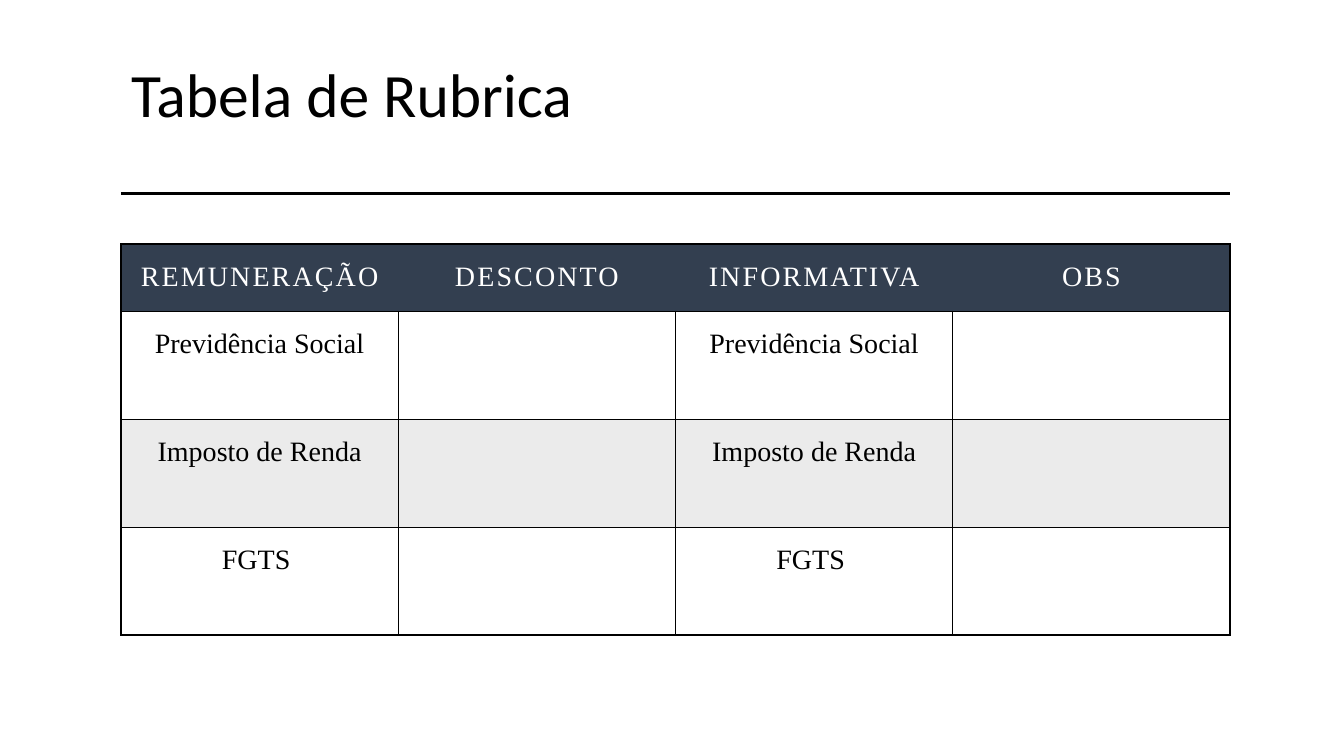
from dataclasses import dataclass

from lxml.etree import SubElement
from pptx import Presentation
from pptx.dml.color import RGBColor
from pptx.enum.shapes import MSO_CONNECTOR
from pptx.enum.text import MSO_ANCHOR, PP_ALIGN
from pptx.oxml.ns import qn
from pptx.util import Inches, Pt


@dataclass(frozen=True)
class Theme:
    black: str = "000000"
    white: str = "FFFFFF"
    header: str = "333F50"
    band: str = "EBEBEB"
    title_font: str = "Calibri"
    table_font: str = "Times New Roman"
    title_size: int = 44
    table_size: int = 20
    border_width: int = 1
    rule_width: float = 1.5
    header_spacing: float = 1.5


THEME = Theme()
LEFT, WIDTH = 1.2, 11
HEADER_HEIGHT, ROW_HEIGHT, CELL_MARGIN = 0.67, 1.07, 0.17

HEADINGS = ["REMUNERAÇÃO", "DESCONTO", "INFORMATIVA", "OBS"]
RUBRICS = ["Previdência Social", "Imposto de Renda", "FGTS "]
ROWS = [HEADINGS] + [[rubric, "", rubric, ""] for rubric in RUBRICS]


def add_run(paragraph, text, font_name, size, color):
    run = paragraph.add_run()
    run.text = text
    run.font.name = font_name
    run.font.size = Pt(size)
    run.font.bold = False
    run.font.color.rgb = RGBColor.from_string(color)
    return run


def place_title(slide, text, left, top, width, height):
    title = slide.shapes.title
    title.left, title.top = Inches(left), Inches(top)
    title.width, title.height = Inches(width), Inches(height)
    title.text_frame.vertical_anchor = MSO_ANCHOR.MIDDLE
    paragraph = title.text_frame.paragraphs[0]
    paragraph.alignment = PP_ALIGN.LEFT
    paragraph.line_spacing = 0.9
    add_run(paragraph, text, THEME.title_font, THEME.title_size, THEME.black)


def add_rule(slide, left, top, width):
    rule = slide.shapes.add_connector(
        MSO_CONNECTOR.STRAIGHT,
        Inches(left), Inches(top), Inches(left + width), Inches(top))
    rule.line.color.rgb = RGBColor.from_string(THEME.black)
    rule.line.width = Pt(THEME.rule_width)
    SubElement(rule.element.spPr, qn("a:effectLst"))


def set_borders(cell, visible_sides):
    """Draw the given sides (letters of LRTB) and clear the others."""
    properties = cell._tc.get_or_add_tcPr()
    for position, side in enumerate("LRTB"):
        border = SubElement(properties, qn(f"a:ln{side}"),
                            w=str(Pt(THEME.border_width)))
        if side in visible_sides:
            fill = SubElement(border, qn("a:solidFill"))
            SubElement(fill, qn("a:srgbClr"), val=THEME.black)
        else:
            SubElement(border, qn("a:noFill"))
        properties.insert(position, border)


def fill_cell(cell, text, row):
    is_header = row == 0
    cell.margin_left = cell.margin_right = Inches(CELL_MARGIN)
    cell.margin_top = cell.margin_bottom = Inches(CELL_MARGIN)
    if is_header or row % 2 == 0:
        cell.fill.solid()
        color = THEME.header if is_header else THEME.band
        cell.fill.fore_color.rgb = RGBColor.from_string(color)
    else:
        cell.fill.background()
    if text:
        paragraph = cell.text_frame.paragraphs[0]
        paragraph.alignment = PP_ALIGN.CENTER
        run = add_run(paragraph, text, THEME.table_font, THEME.table_size,
                      THEME.white if is_header else THEME.black)
        if is_header:
            run.font._element.set("spc", str(round(THEME.header_spacing * 100)))


def add_rubric_table(slide, left, top, width):
    height = HEADER_HEIGHT + ROW_HEIGHT * len(RUBRICS)
    table = slide.shapes.add_table(
        len(ROWS), len(HEADINGS),
        Inches(left), Inches(top), Inches(width), Inches(height)).table
    table.horz_banding = False
    for column in table.columns:
        column.width = Inches(width / len(HEADINGS))
    last = len(HEADINGS) - 1
    for row, texts in enumerate(ROWS):
        table.rows[row].height = Inches(ROW_HEIGHT if row else HEADER_HEIGHT)
        for column, text in enumerate(texts):
            cell = table.cell(row, column)
            fill_cell(cell, text, row)
            sides = "TB"
            if row or column == 0:
                sides += "L"
            if row or column == last:
                sides += "R"
            set_borders(cell, sides)


def main():
    presentation = Presentation()
    presentation.slide_width = Inches(13.33)
    presentation.slide_height = Inches(7.5)
    title_only = presentation.slide_layouts[5]
    slide = presentation.slides.add_slide(title_only)
    place_title(slide, "Tabela de Rubrica", LEFT, 0.31, WIDTH, 1.31)
    add_rubric_table(slide, LEFT, 2.42, WIDTH)
    add_rule(slide, LEFT, 1.92, WIDTH)
    presentation.save("out.pptx")


if __name__ == "__main__":
    main()
